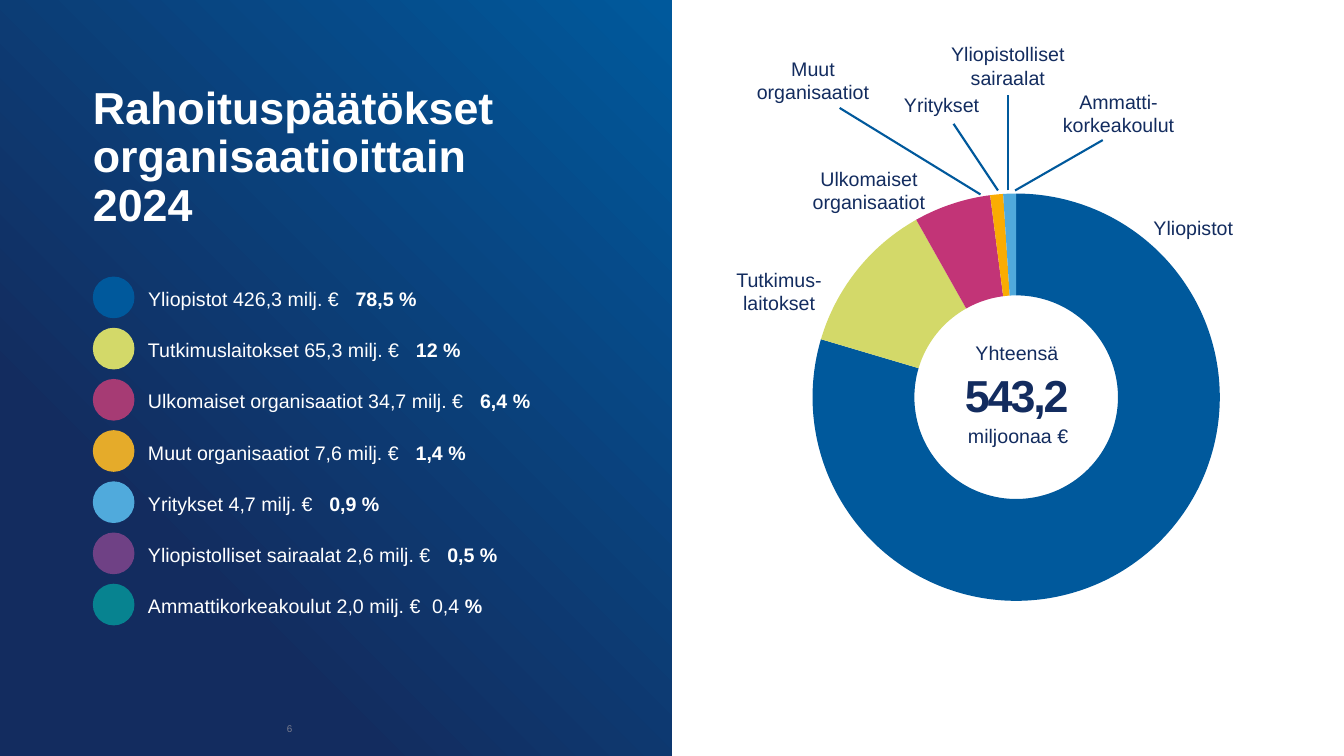
from pptx import Presentation
from pptx.chart.data import CategoryChartData
from pptx.dml.color import RGBColor
from pptx.enum.chart import XL_CHART_TYPE
from pptx.enum.shapes import MSO_CONNECTOR, MSO_SHAPE
from pptx.enum.text import MSO_ANCHOR, MSO_AUTO_SIZE, PP_ALIGN
from pptx.util import Cm, Pt
from pptx.oxml import parse_xml
from pptx.oxml.ns import nsdecls, qn

WHITE = RGBColor(0xFF, 0xFF, 0xFF)
NAVY = RGBColor(0x13, 0x2C, 0x5F)
BLUE = RGBColor(0x00, 0x59, 0x9C)
GRAY = RGBColor(0x7A, 0x7D, 0x8F)
LIME = RGBColor(0xD3, 0xD9, 0x69)
PINK = RGBColor(0xC2, 0x34, 0x77)
ROSE = RGBColor(0xA6, 0x3B, 0x74)
AMBER = RGBColor(0xFA, 0xAC, 0x02)
GOLD = RGBColor(0xE5, 0xAB, 0x2A)
SKY = RGBColor(0x50, 0xAA, 0xDC)
PLUM = RGBColor(0x6F, 0x41, 0x85)
TEAL = RGBColor(0x07, 0x83, 0x90)

SPACE = 3.9  # width of a 14 pt space in points

# Name, sum, extra gap in spaces, plain share, bold share, value,
# slice colour, dot colour, text width
ROWS = [
    ("Yliopistot", "426,3", 2, "", "78,5 %", 78, BLUE, BLUE, 7.52),
    ("Tutkimuslaitokset", "65,3", 2, "", "12 %", 12, LIME, LIME, 8.53),
    ("Ulkomaiset organisaatiot", "34,7", 2, "", "6,4 %", 6, PINK, ROSE, 10.21),
    ("Muut organisaatiot", "7,6", 2, "", "1,4 %", 1, AMBER, GOLD, 11.38),
    ("Yritykset", "4,7", 2, "", "0,9 %", 1, SKY, SKY, 11.35),
    ("Yliopistolliset sairaalat", "2,6", 2, "", "0,5 %", 0, PLUM, PLUM, 11.35),
    ("Ammattikorkeakoulut", "2,0", 1, "0,4 ", "%", 0, TEAL, TEAL, 11.35),
]

LABELS = [
    ("Yliopistot", 28.59, 5.31, 2.97, 0.86),
    ("Yritykset", 21.99, 2.21, 3.48, 0.86),
    ("Tutkimus-\nlaitokset", 18.11, 6.62, 3.05, 1.45),
    ("Ulkomaiset organisaatiot", 19.73, 4.07, 4.34, 1.45),
    ("Muut organisaatiot", 18.75, 1.3, 3.48, 1.45),
    ("Yliopistolliset sairaalat", 23.42, 0.94, 3.96, 1.45),
    ("Ammatti-\nkorkeakoulut", 26.21, 2.13, 3.96, 1.45),
    ("Yhteensä", 24.03, 8.47, 3.2, 0.86),
    ("miljoonaa €", 23.5, 10.57, 4.32, 0.86),
]

LINES = [
    (25.58, 4.8, 27.79, 3.53),
    (25.4, 4.8, 25.4, 2.39),
    (25.15, 4.8, 24.03, 3.12),
    (24.71, 4.9, 21.16, 2.72),
]


def add_run(para, text, size=14, color=NAVY, bold=False, track=0):
    for i, part in enumerate(text.split("\n")):
        if i:
            para.add_line_break()
        run = para.add_run()
        run.text = part
        run.font.name = "Arial"
        run.font.size = Pt(size)
        run.font.bold = bold
        run.font.color.rgb = color
        if track:
            run.font._element.set("spc", str(round(track * 100)))


def write(box, text, align=PP_ALIGN.LEFT, anchor=MSO_ANCHOR.TOP,
          inset=True, lead=1.0, **style):
    """Fill a box with one paragraph and return that paragraph."""
    frame = box.text_frame
    frame.word_wrap = True
    frame.auto_size = MSO_AUTO_SIZE.NONE
    frame.vertical_anchor = anchor
    if not inset:
        frame.margin_left = frame.margin_right = 0
        frame.margin_top = frame.margin_bottom = 0
    para = frame.paragraphs[0]
    para.alignment = align
    para.line_spacing = lead
    para.space_before = Pt(0)
    add_run(para, text, **style)
    return para


def place(shape, left, top, width, height):
    shape.left, shape.top = Cm(left), Cm(top)
    shape.width, shape.height = Cm(width), Cm(height)


def add_text(slide, text, left, top, width, height, **style):
    box = slide.shapes.add_textbox(Cm(left), Cm(top), Cm(width), Cm(height))
    return write(box, text, **style)


def add_panel(slide):
    panel = slide.shapes.add_shape(MSO_SHAPE.RECTANGLE, 0, 0, Cm(16.93), Cm(19.05))
    panel.shadow.inherit = False
    panel.line.fill.background()
    panel.fill.gradient()
    panel.fill.gradient_angle = 45
    for stop, spot, color in zip(panel.fill.gradient_stops, (0.26, 1), (NAVY, BLUE)):
        stop.position = spot
        stop.color.rgb = color
    # Send behind the title and list
    slide.shapes.title.element.addprevious(panel.element)


def add_dot(slide, top, color):
    dot = slide.shapes.add_shape(MSO_SHAPE.OVAL, Cm(2.34), Cm(top), Cm(1.05), Cm(1.05))
    dot.shadow.inherit = False
    dot.fill.solid()
    dot.fill.fore_color.rgb = color
    dot.line.fill.background()


def add_legend(slide):
    body = slide.placeholders[1]
    for i, (name, total, gap, plain, bold, _, _, color, width) in enumerate(ROWS):
        top = 6.97 + 1.29 * i
        add_dot(slide, top, color)
        box = body if i == 0 else slide.shapes.add_textbox(0, 0, 0, 0)
        place(box, 3.73, top + 0.26, width, 0.76)
        if box is body:
            props = box.text_frame.paragraphs[0]._p.get_or_add_pPr()
            props.set("marL", "0")
            props.set("indent", "0")
            props.append(parse_xml(f"<a:buNone {nsdecls('a')}/>"))
        para = write(box, f"{name} {total} milj. €", inset=False, color=WHITE)
        add_run(para, " ", color=WHITE, track=gap * SPACE)
        if plain:
            add_run(para, plain, color=WHITE)
        add_run(para, bold, color=WHITE, bold=True)


def add_ring(slide):
    data = CategoryChartData()
    data.categories = [row[0] for row in ROWS]
    data.add_series("Series 1", [row[5] for row in ROWS])
    chart = slide.shapes.add_chart(
        XL_CHART_TYPE.DOUGHNUT, Cm(17.42), Cm(4.55), Cm(16.38), Cm(10.92), data).chart
    chart.has_title = chart.has_legend = False
    chart.font.name = "Arial"
    chart.font.size = Pt(10)
    chart.font.color.rgb = NAVY
    plot = chart.plots[0]
    plot.vary_by_categories = True
    plot.has_data_labels = False
    for i, row in enumerate(ROWS):
        look = plot.series[0].points[i].format
        look.fill.solid()
        look.fill.fore_color.rgb = row[6]
        look.line.fill.background()
    # Hole size and plot area
    root = chart.element
    root.find(".//" + qn("c:holeSize")).set("val", "60")
    area = root.find(".//" + qn("c:plotArea"))
    for old in area.findall(qn("c:layout")):
        area.remove(old)
    sides = (("x", 0.18), ("y", 0.03), ("w", 0.64), ("h", 0.94))
    modes = '<c:layoutTarget val="inner"/><c:xMode val="edge"/><c:yMode val="edge"/>'
    spots = "".join(f'<c:{key} val="{val}"/>' for key, val in sides)
    area.insert(0, parse_xml(
        f"<c:layout {nsdecls('c')}><c:manualLayout>{modes}{spots}"
        "</c:manualLayout></c:layout>"))


def add_line(slide, *ends):
    line = slide.shapes.add_connector(MSO_CONNECTOR.STRAIGHT, *map(Cm, ends))
    line.line.color.rgb = BLUE
    line.line.width = Pt(1.5)
    line.element.spPr.append(parse_xml(f"<a:effectLst {nsdecls('a')}/>"))


def main():
    deck = Presentation()
    deck.slide_width, deck.slide_height = Cm(33.87), Cm(19.05)
    slide = deck.slides.add_slide(deck.slide_layouts[1])

    # Left panel
    add_panel(slide)
    title = slide.shapes.title
    place(title, 2.34, 2.01, 13.61, 3.81)
    write(title, "Rahoituspäätökset organisaatioittain\n2024", inset=False,
          anchor=MSO_ANCHOR.BOTTOM, lead=0.9, size=32, bold=True, color=WHITE)
    add_legend(slide)
    add_text(slide, "6", 6.63, 18.11, 0.99, 0.48, size=7, color=GRAY,
             align=PP_ALIGN.RIGHT, anchor=MSO_ANCHOR.MIDDLE)

    # Ring chart with labels
    add_ring(slide)
    for label in LABELS:
        add_text(slide, *label, align=PP_ALIGN.CENTER)
    add_text(slide, "543,2", 22.83, 9.14, 5.59, 1.63, size=32, bold=True,
             track=-1.5, align=PP_ALIGN.CENTER)
    for ends in LINES:
        add_line(slide, *ends)

    deck.save("out.pptx")


if __name__ == "__main__":
    main()
